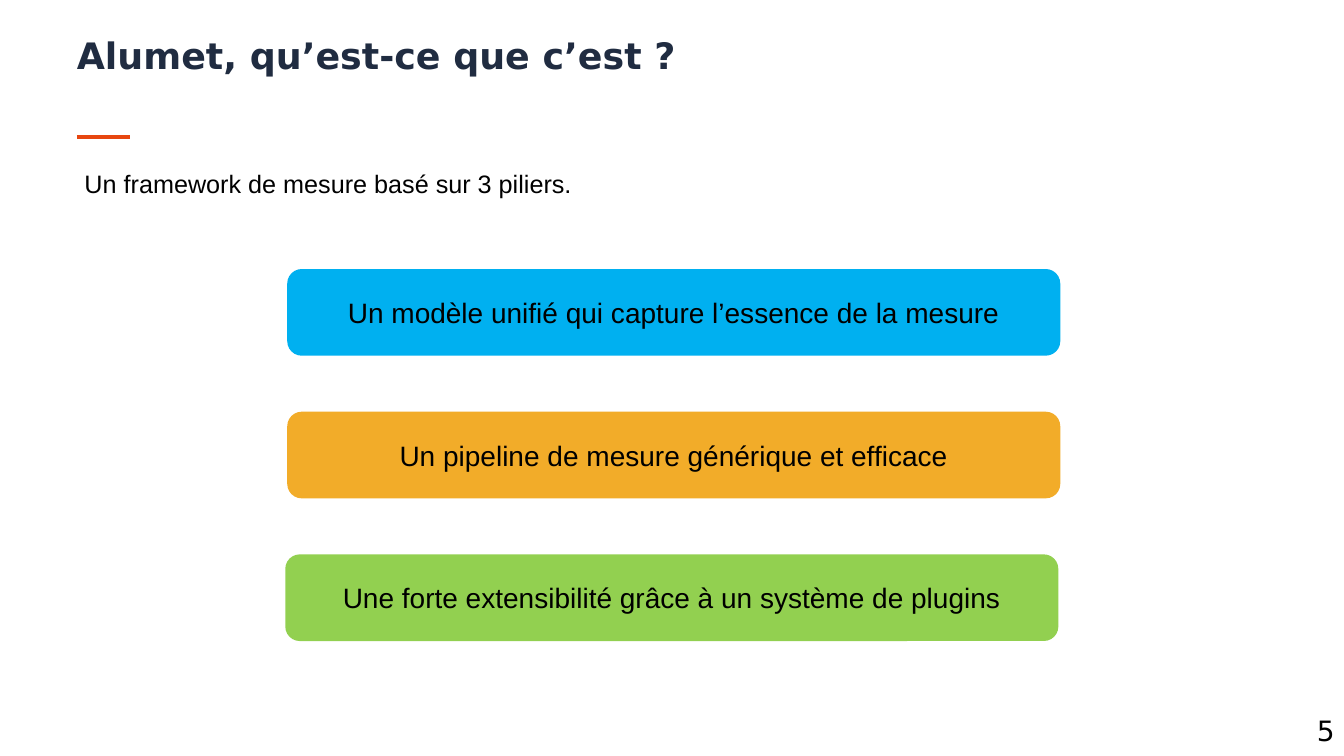
from lxml import etree
from pptx import Presentation
from pptx.dml.color import RGBColor
from pptx.enum.shapes import MSO_CONNECTOR, MSO_SHAPE
from pptx.enum.text import MSO_ANCHOR, PP_ALIGN as Align
from pptx.oxml.ns import qn
from pptx.util import Pt

TITLE = "Alumet, qu’est-ce que c’est\u00a0?"
INTRO = "Un framework de mesure basé sur 3 piliers."
PAGE_NUMBER = "5"
PILLARS = [  # text, fill, left
    ("Un modèle unifié qui capture l’essence de la mesure", "00B0F0", 205.2),
    ("Un pipeline de mesure générique et efficace", "F2AC29", 205.2),
    ("Une forte extensibilité grâce à un système de plugins", "92D050", 203.8),
]
PILLAR_TOP, PILLAR_PITCH = 192.2, 101.9
PILLAR_WIDTH, PILLAR_HEIGHT = 552.2, 61.9
HEADING_FONT, BODY_FONT = "DejaVu Sans", "Arial"


def color(hex_code):
    return RGBColor.from_string(hex_code)


def write(shape, text, size, font, ink="000000", bold=False, align=Align.LEFT):
    shape.text_frame.word_wrap = True
    paragraph = shape.text_frame.paragraphs[0]
    paragraph.alignment = align
    run = paragraph.add_run()
    run.text = text
    run.font.size = Pt(size)
    run.font.name = font
    run.font.bold = bold
    run.font.color.rgb = color(ink)


def add_label(left, top, width, height, *text_style, **options):
    label = slide.shapes.add_textbox(Pt(left), Pt(top), Pt(width), Pt(height))
    write(label, *text_style, **options)
    return label


prs = Presentation()
prs.slide_width, prs.slide_height = Pt(960), Pt(540)
slide = prs.slides.add_slide(prs.slide_layouts[6])

add_label(836, 506.2, 124.4, 33.8, PAGE_NUMBER, 20, HEADING_FONT, align=Align.RIGHT)

title = add_label(54.9, 23.8, 691.2, 65.5, TITLE, 26, HEADING_FONT, "202C41", bold=True)
title.text_frame.margin_left = 0
title.text_frame.paragraphs[0].line_spacing = 0.9

accent = slide.shapes.add_connector(
    MSO_CONNECTOR.STRAIGHT, Pt(54.9), Pt(97.9), Pt(92.9), Pt(97.9))
accent.line.color.rgb = color("E74610")
accent.line.width = Pt(2.25)
etree.SubElement(accent._element.spPr, qn("a:effectLst"))

add_label(53.3, 116.6, 876.2, 29.1, INTRO, 18, BODY_FONT)

for row, (text, fill, left) in enumerate(PILLARS):
    pillar = slide.shapes.add_shape(
        MSO_SHAPE.ROUNDED_RECTANGLE, Pt(left), Pt(PILLAR_TOP + row * PILLAR_PITCH),
        Pt(PILLAR_WIDTH), Pt(PILLAR_HEIGHT))
    pillar.shadow.inherit = False
    pillar.fill.solid()
    pillar.fill.fore_color.rgb = color(fill)
    pillar.line.fill.background()
    pillar.text_frame.vertical_anchor = MSO_ANCHOR.MIDDLE
    write(pillar, text, 20, BODY_FONT, align=Align.CENTER)

prs.save("out.pptx")
